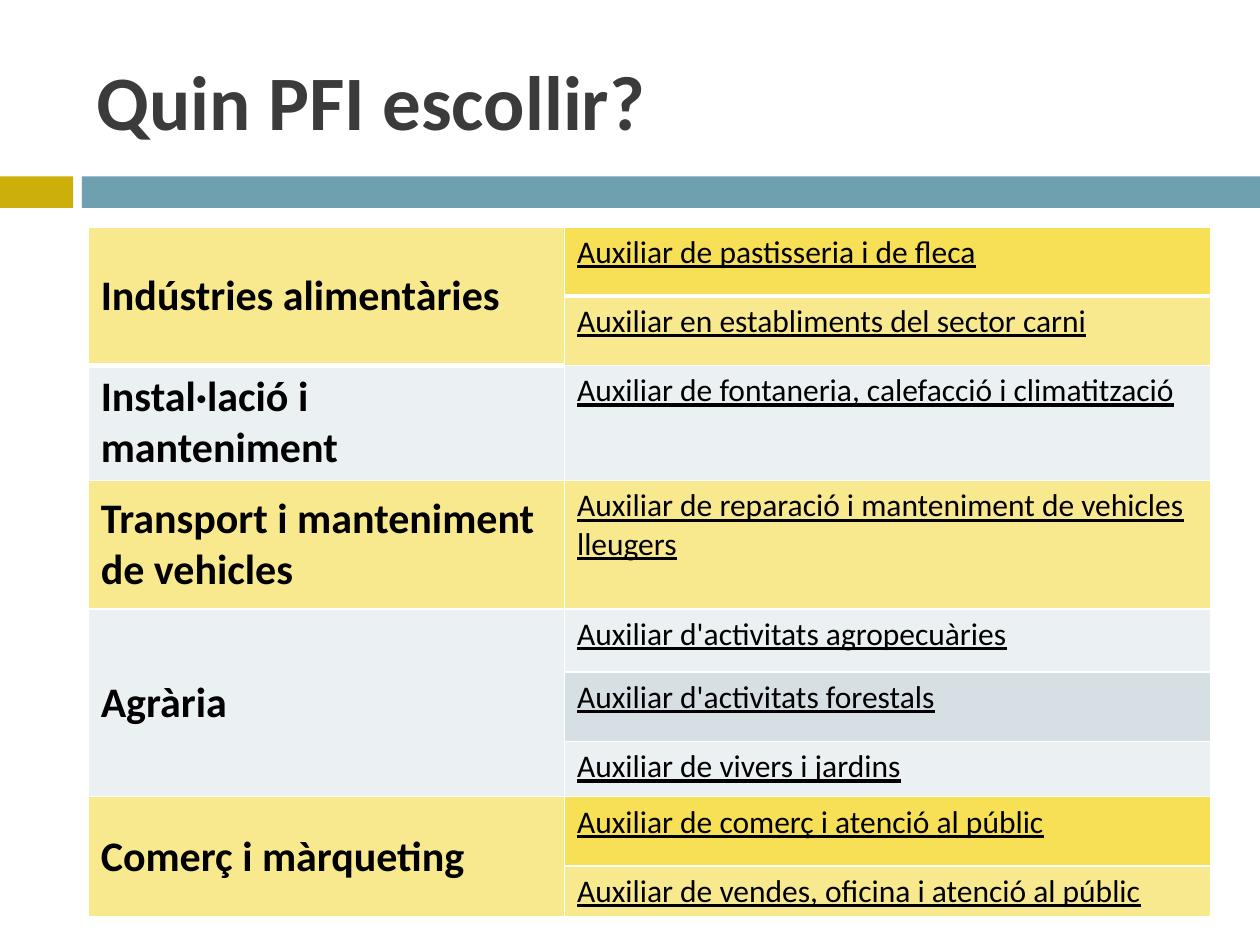
from dataclasses import dataclass

from lxml.etree import SubElement
from pptx import Presentation
from pptx.dml.color import RGBColor as Rgb
from pptx.enum.shapes import MSO_SHAPE as Shape
from pptx.enum.text import MSO_ANCHOR as Anchor
from pptx.oxml.ns import qn
from pptx.util import Inches, Pt


@dataclass(frozen=True)
class Theme:
    font: str = "Calibri"
    title_size: int = 44
    family_size: int = 24
    course_size: int = 18
    title: str = "3B3B3B"
    text: str = "000000"
    gold: str = "CCAF0A"
    teal: str = "6EA0B0"
    yellow: str = "F9E98E"
    deep_yellow: str = "F7DF56"
    grey: str = "EBF0F2"
    deep_grey: str = "D5DFE4"
    border: str = "FFFFFF"
    thin: int = 1
    thick: int = 3


THEME = Theme()

# Professional family, its fill, and its courses as (name, fill, row height)
FAMILIES = [
    ("Indústries alimentàries", THEME.yellow, [
        ("Auxiliar de pastisseria i de fleca", THEME.deep_yellow, 0.55),
        ("Auxiliar en establiments del sector carni", THEME.yellow, 0.55)]),
    ("Instal·lació i manteniment", THEME.grey, [
        ("Auxiliar de fontaneria, calefacció i climatització", THEME.grey, 0.7)]),
    ("Transport i manteniment de vehicles", THEME.yellow, [
        ("Auxiliar de reparació i manteniment de vehicles lleugers", THEME.yellow, 1.02)]),
    ("Agrària", THEME.grey, [
        ("Auxiliar d'activitats agropecuàries", THEME.grey, 0.5),
        ("Auxiliar d'activitats forestals", THEME.deep_grey, 0.55),
        ("Auxiliar de vivers i jardins", THEME.grey, 0.44)]),
    ("Comerç i màrqueting", THEME.yellow, [
        ("Auxiliar de comerç i atenció al públic", THEME.deep_yellow, 0.55),
        ("Auxiliar de vendes, oficina i atenció al públic", THEME.yellow, 0.25)]),
]
COLUMN_WIDTHS = (3.78, 5.13)


def add_run(frame, text, size, color, bold=False, underline=False):
    run = frame.paragraphs[0].add_run()
    run.text = text
    font = run.font
    font.name, font.size = THEME.font, Pt(size)
    font.bold, font.underline = bold, underline
    font.color.rgb = Rgb.from_string(color)


def add_band(slide, left, width, color):
    band = slide.shapes.add_shape(
        Shape.RECTANGLE, Inches(left), Inches(1.4), Inches(width), Inches(0.25))
    band.shadow.inherit = False
    band.fill.solid()
    band.fill.fore_color.rgb = Rgb.from_string(color)
    band.line.fill.background()


def add_title(slide, text):
    title = slide.shapes.add_textbox(
        Inches(0.67), Inches(0.25), Inches(8.92), Inches(1.08))
    frame = title.text_frame
    frame.word_wrap = True
    frame.vertical_anchor = Anchor.MIDDLE
    add_run(frame, text, THEME.title_size, THEME.title, bold=True)


def style_cell(cell, fill, top, bottom):
    cell.fill.solid()
    cell.fill.fore_color.rgb = Rgb.from_string(fill)
    # Borders come before the fill in the cell properties
    properties = cell._tc.get_or_add_tcPr()
    widths = {"lnL": THEME.thin, "lnR": THEME.thin, "lnT": top, "lnB": bottom}
    for position, (side, width) in enumerate(widths.items()):
        line = SubElement(properties, qn(f"a:{side}"), w=str(Pt(width)))
        solid = SubElement(line, qn("a:solidFill"))
        SubElement(solid, qn("a:srgbClr"), val=THEME.border)
        properties.insert(position, line)


def add_course_table(slide, families):
    heights = [height for _, _, courses in families for _, _, height in courses]
    table = slide.shapes.add_table(
        len(heights), 2, Inches(0.7), Inches(1.8),
        Inches(sum(COLUMN_WIDTHS)), Inches(sum(heights))).table
    for column, width in zip(table.columns, COLUMN_WIDTHS):
        column.width = Inches(width)
    for row, height in zip(table.rows, heights):
        row.height = Inches(height)

    # A thick line closes the first cell of each column
    first_span = len(families[0][2])

    def edges(row, closing_row):
        top = THEME.thick if row == closing_row + 1 else THEME.thin
        bottom = THEME.thick if row == closing_row else THEME.thin
        return top, bottom

    start = 0
    for family, family_fill, courses in families:
        last = start + len(courses) - 1
        for row, (course, fill, _) in enumerate(courses, start):
            family_edges = edges(last if start == 0 else row, first_span - 1)
            style_cell(table.cell(row, 0), family_fill, *family_edges)
            course_cell = table.cell(row, 1)
            style_cell(course_cell, fill, *edges(row, 0))
            add_run(course_cell.text_frame, course, THEME.course_size,
                    THEME.text, underline=True)
        family_cell = table.cell(start, 0)
        if last > start:
            family_cell.merge(table.cell(last, 0))
        family_cell.vertical_anchor = Anchor.MIDDLE
        add_run(family_cell.text_frame, family, THEME.family_size,
                THEME.text, bold=True)
        start = last + 1


def main():
    deck = Presentation()
    deck.slide_width, deck.slide_height = Inches(10), Inches(7.5)
    slide = deck.slides.add_slide(deck.slide_layouts[6])

    # Two-colour band under the title
    add_band(slide, 0, 0.58, THEME.gold)
    add_band(slide, 0.65, 9.35, THEME.teal)

    # Courses by professional family
    add_course_table(slide, FAMILIES)

    add_title(slide, "Quin PFI escollir?")
    deck.save("out.pptx")


if __name__ == "__main__":
    main()
